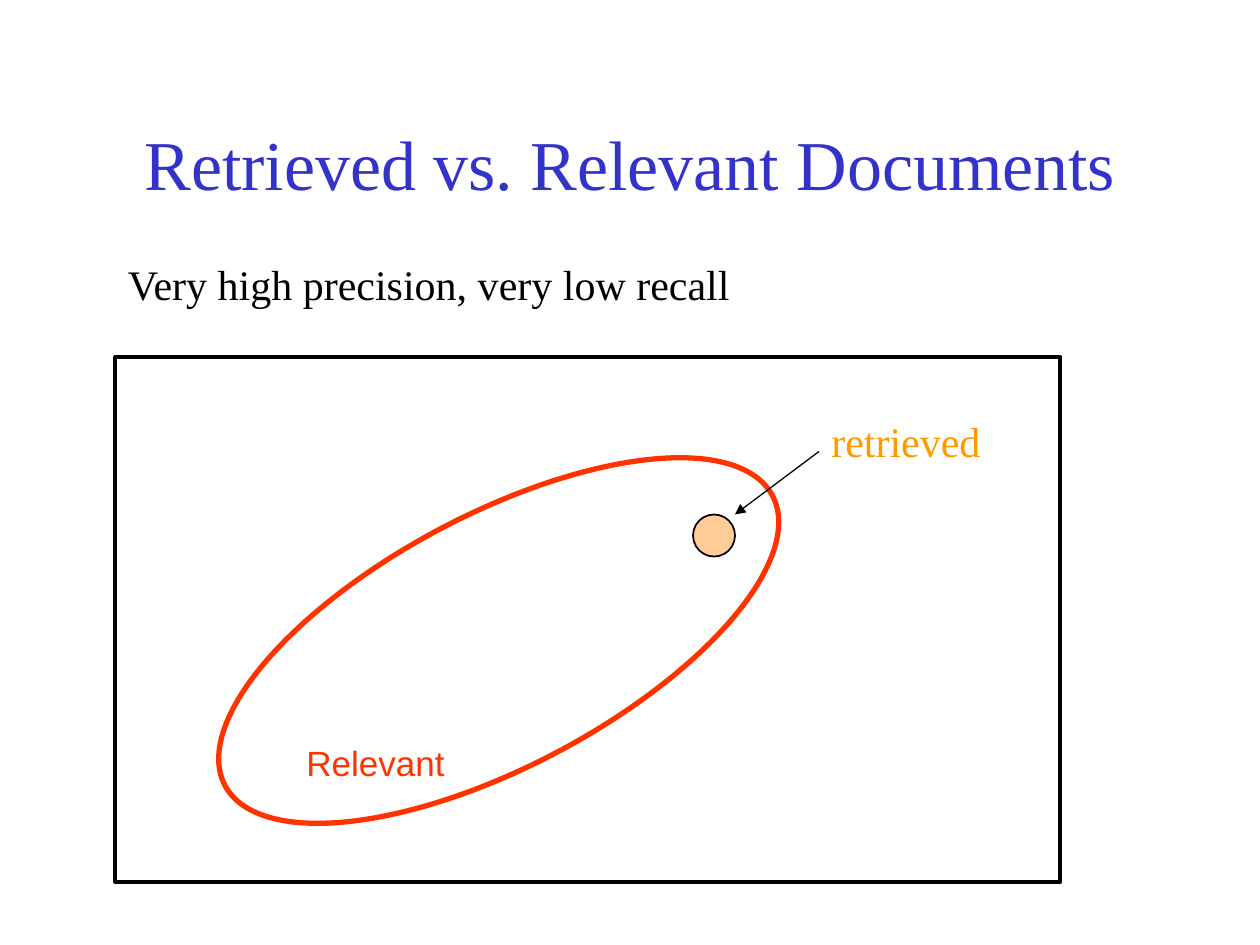
from dataclasses import dataclass
from lxml import etree
from pptx import Presentation
from pptx.dml.color import RGBColor
from pptx.enum.shapes import MSO_CONNECTOR, MSO_SHAPE
from pptx.enum.text import MSO_ANCHOR, MSO_AUTO_SIZE, PP_ALIGN
from pptx.oxml.ns import qn
from pptx.util import Pt

RECTANGLE, ELLIPSE = MSO_SHAPE.RECTANGLE, MSO_SHAPE.OVAL
STRAIGHT = MSO_CONNECTOR.STRAIGHT
MIDDLE, TOP = MSO_ANCHOR.MIDDLE, MSO_ANCHOR.TOP
CENTER, LEFT = PP_ALIGN.CENTER, PP_ALIGN.LEFT
FIT_SHAPE, NO_FIT = MSO_AUTO_SIZE.SHAPE_TO_FIT_TEXT, MSO_AUTO_SIZE.NONE


@dataclass(frozen=True)
class Theme:
    serif: str = "Times New Roman"
    sans: str = "Arial"
    title_size: int = 40
    body_size: int = 24
    label_size: int = 20
    blue: str = "3333CC"
    red: str = "FF3300"
    orange: str = "FF9900"
    peach: str = "FFCC99"
    black: str = "000000"
    white: str = "FFFFFF"


theme = Theme()


def write_text(box, text, font, size, color, align=LEFT):
    frame = box.text_frame
    frame.text = text
    para = frame.paragraphs[0]
    para.alignment = align
    span = para.runs[0]
    span.font.name = font
    span.font.size = Pt(size)
    span.font.color.rgb = RGBColor.from_string(color)
    return frame


deck = Presentation()
deck.slide_width, deck.slide_height = Pt(720), Pt(540)
page = deck.slides.add_slide(deck.slide_layouts[5])
page.background.fill.solid()
page.background.fill.fore_color.rgb = RGBColor.from_string(theme.white)

title = page.shapes.title
title.left, title.top, title.width, title.height = Pt(54), Pt(48), Pt(612), Pt(90)
title_frame = write_text(title, "Retrieved vs. Relevant Documents",
                         theme.serif, theme.title_size, theme.blue, CENTER)
title_frame.vertical_anchor = MIDDLE
title_frame.auto_size = NO_FIT

outlines = [
    (ELLIPSE, 108, 294, 354, 144, 332.1, None, theme.red, 3),
    (ELLIPSE, 396, 294, 24, 24, 0, theme.peach, theme.black, 1),
    (RECTANGLE, 66, 204, 540, 300, 0, None, theme.black, 2.25),
]
for kind, left, top, width, height, angle, fill, line, weight in outlines:
    outline = page.shapes.add_shape(kind, Pt(left), Pt(top), Pt(width), Pt(height))
    outline.rotation = angle
    outline.shadow.inherit = False
    if fill:
        outline.fill.solid()
        outline.fill.fore_color.rgb = RGBColor.from_string(fill)
    else:
        outline.fill.background()
    outline.line.color.rgb = RGBColor.from_string(line)
    outline.line.width = Pt(weight)

labels = [
    ("Relevant", 168, 420, 93.6, 31, theme.sans, theme.label_size, theme.red),
    ("Very high precision, very low recall", 66, 144, 361, 36,
     theme.serif, theme.body_size, theme.black),
    ("retrieved", 468, 234, 100, 36, theme.serif, theme.body_size, theme.orange),
]
for text, left, top, width, height, font, size, color in labels:
    label = page.shapes.add_textbox(Pt(left), Pt(top), Pt(width), Pt(height))
    frame = write_text(label, text, font, size, color)
    frame.vertical_anchor = TOP
    frame.word_wrap = False
    frame.auto_size = FIT_SHAPE

arrow = page.shapes.add_connector(STRAIGHT, Pt(468), Pt(258), Pt(420), Pt(294))
arrow.line.color.rgb = RGBColor.from_string(theme.black)
arrow.line.width = Pt(0.75)
etree.SubElement(arrow.line._get_or_add_ln(), qn("a:tailEnd"), type="triangle")
etree.SubElement(arrow._element.spPr, qn("a:effectLst"))

deck.save("out.pptx")
